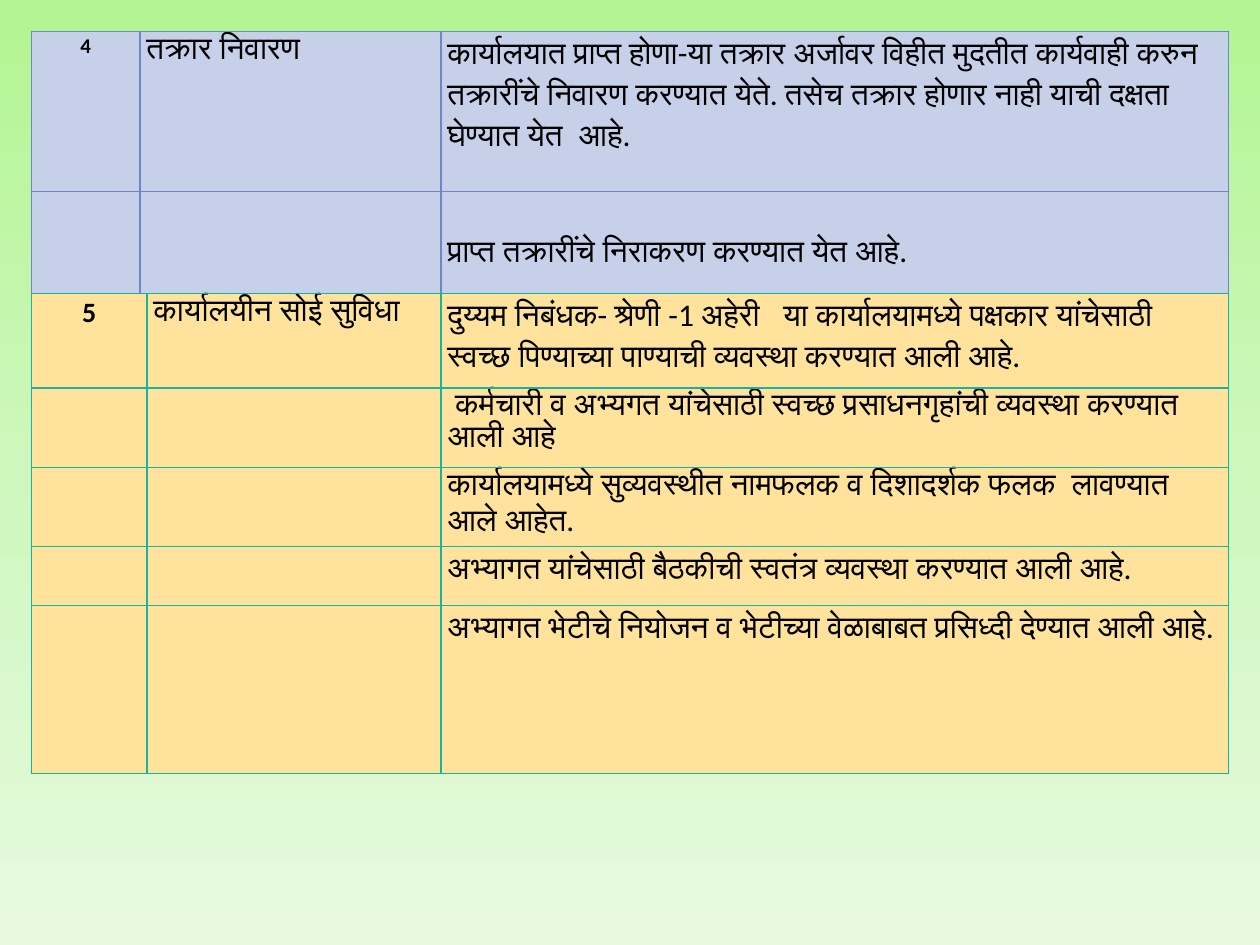
import copy
from dataclasses import dataclass

import pptx
import pptx.dml.color
import pptx.enum.text
import pptx.oxml
import pptx.oxml.ns
import pptx.util

Pt = pptx.util.Pt
RGB = pptx.dml.color.RGBColor.from_string
qn = pptx.oxml.ns.qn


@dataclass(frozen=True)
class Theme:
    font: str = "Calibri"
    text: str = "000000"
    background: tuple = ("B2F592", "CEF7BD", "E7FADF")
    complaint_fill: str = "C7D0E9"
    complaint_line: str = "6E86C6"
    facility_fill: str = "FFE39D"
    facility_line: str = "16B39E"
    body: int = 18
    small_number: int = 12
    number: int = 16
    loose: float = 1.07
    single: float = 1.0


THEME = Theme()
LEFT = 18
TABLE_WIDTH = 684
DETAIL_WIDTH = 450
SINGLE_TOP = 1.5


def set_background(s):
    """Vertical gradient with evenly spaced stops."""
    fill = s.background.fill
    fill.gradient()
    fill.gradient_angle = 270
    first = next(s.element.iter(qn("a:gs")))
    first.addnext(copy.deepcopy(first))
    stops = list(fill.gradient_stops)
    for i, (stop, color) in enumerate(zip(stops, THEME.background)):
        stop.position = i / (len(stops) - 1)
        stop.color.rgb = RGB(color)


def set_borders(cell, color):
    tc_pr = cell._tc.get_or_add_tcPr()
    for i, side in enumerate("LRTB"):
        tc_pr.insert(i, pptx.oxml.parse_xml(
            f'<a:ln{side} {pptx.oxml.ns.nsdecls("a")} w="{Pt(0.75)}">'
            f'<a:solidFill><a:srgbClr val="{color}"/></a:solidFill></a:ln{side}>'))


def write(cell, text, size=THEME.body, spacing=THEME.loose, bold=False,
          centered=False, top=0):
    cell.margin_left = cell.margin_right = Pt(3.6)
    cell.margin_top, cell.margin_bottom = Pt(top), Pt(0)
    p = cell.text_frame.paragraphs[0]
    p.text = text
    p.line_spacing = spacing
    if centered:
        p.alignment = pptx.enum.text.PP_ALIGN.CENTER
    p.font.name = THEME.font
    p.font.size = Pt(size)
    p.font.bold = bold
    p.font.color.rgb = RGB(THEME.text)


def write_single(cell, text):
    """Single-spaced text, kept clear of the border above it."""
    write(cell, text, spacing=THEME.single, top=SINGLE_TOP)


def add_section(s, top, number_width, heights, fill, line):
    """Add an empty three-column table: number, subject, details."""
    widths = (number_width, TABLE_WIDTH - DETAIL_WIDTH - number_width, DETAIL_WIDTH)
    table = s.shapes.add_table(len(heights), len(widths), Pt(LEFT), Pt(top),
                               Pt(TABLE_WIDTH), Pt(sum(heights))).table
    table.first_row = table.horz_banding = False
    for column, width in zip(table.columns, widths):
        column.width = Pt(width)
    for row, height in zip(table.rows, heights):
        row.height = Pt(height)
    for cell in table.iter_cells():
        cell.fill.solid()
        cell.fill.fore_color.rgb = RGB(fill)
        set_borders(cell, line)
    return table


def write_heading(table, number, subject, number_size):
    write(table.cell(0, 0), number, number_size, bold=True, centered=True)
    write_single(table.cell(0, 1), subject)


def add_complaints(s):
    table = add_section(s, 18, 62, (91.5, 58.2),
                        THEME.complaint_fill, THEME.complaint_line)
    write_heading(table, "4", "तक्रार निवारण", THEME.small_number)
    write(table.cell(0, 2),
          "कार्यालयात प्राप्त होणा-या तक्रार अर्जावर विहीत मुदतीत कार्यवाही करुन "
          "तक्रारींचे निवारण करण्यात येते. तसेच तक्रार होणार नाही याची दक्षता "
          "घेण्यात येत  आहे.")
    write(table.cell(1, 2), "प्राप्त तक्रारींचे निराकरण करण्यात येत आहे.", top=22)


def add_facilities(s):
    table = add_section(s, 167.7, 66, (54, 45.4, 45.4, 33.5, 96),
                        THEME.facility_fill, THEME.facility_line)
    write_heading(table, "5", "कार्यालयीन सोई सुविधा", THEME.number)
    details = (
        (write, "दुय्यम निबंधक- श्रेणी -1 अहेरी   या कार्यालयामध्ये पक्षकार यांचेसाठी "
                "स्वच्छ पिण्याच्या पाण्याची व्यवस्था करण्यात आली आहे."),
        (write_single, " कर्मचारी व अभ्यगत यांचेसाठी स्वच्छ प्रसाधनगृहांची व्यवस्था "
                       "करण्यात आली आहे"),
        (write_single, "कार्यालयामध्ये सुव्यवस्थीत नामफलक व दिशादर्शक फलक  लावण्यात "
                       "आले आहेत."),
        (write, "अभ्यागत यांचेसाठी बैठकीची स्वतंत्र व्यवस्था करण्यात आली आहे."),
        (write, "अभ्यागत भेटीचे नियोजन व भेटीच्या वेळाबाबत प्रसिध्दी देण्यात आली आहे."),
    )
    for row, (write_text, text) in enumerate(details):
        write_text(table.cell(row, 2), text)


def main():
    prs = pptx.Presentation()
    prs.slide_width, prs.slide_height = Pt(720), Pt(540)
    s = prs.slides.add_slide(prs.slide_layouts[6])
    set_background(s)
    add_complaints(s)
    add_facilities(s)
    prs.save("out.pptx")


if __name__ == "__main__":
    main()
